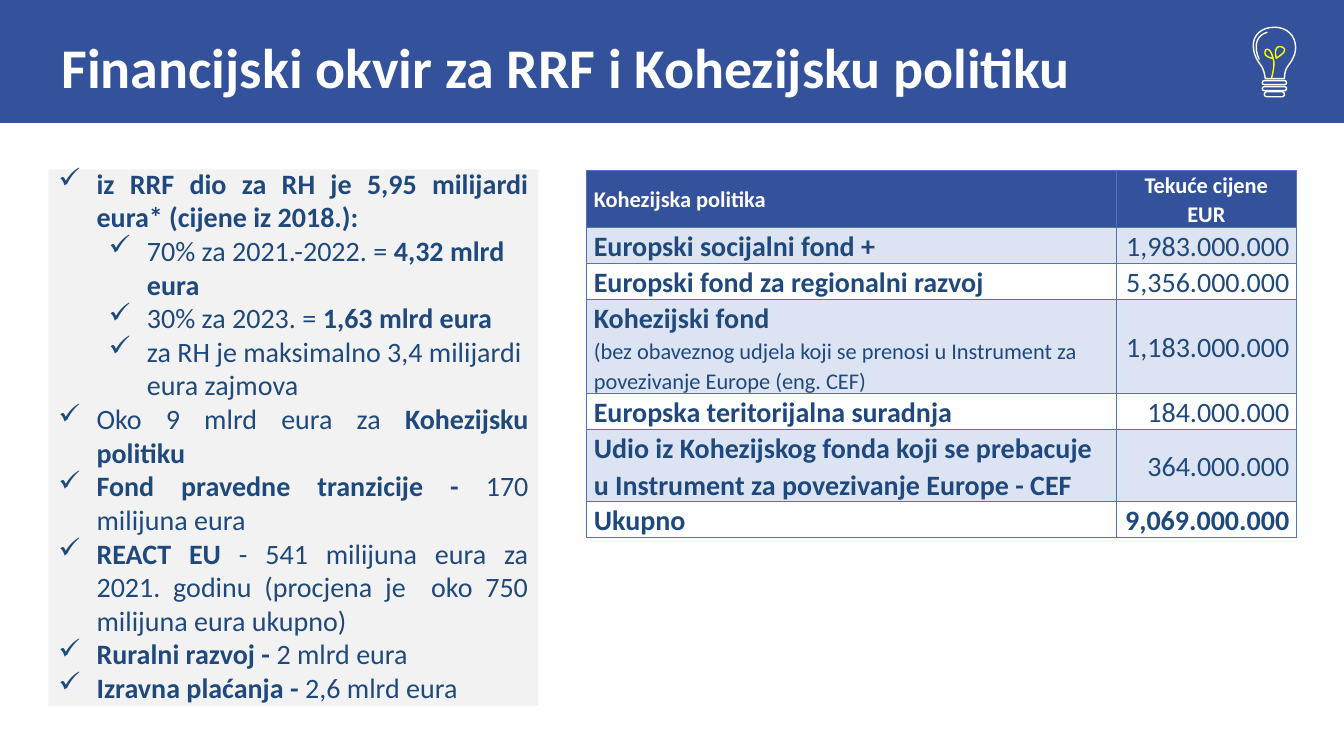
from lxml.etree import SubElement
from pptx import Presentation
from pptx.dml.color import RGBColor
from pptx.enum.shapes import MSO_SHAPE
from pptx.enum.text import MSO_ANCHOR, PP_ALIGN
from pptx.oxml.ns import qn
from pptx.util import Emu, Pt

WIDTH, HEIGHT = 1333, 750
FONT = "Calibri"
NAVY, TEXT_BLUE, BORDER, BAND = "34529B", "1F497D", "5072C4", "DCE3F3"
WHITE, GREY, YELLOW = "FFFFFF", "F2F2F2", "FFFF00"

# Each item: level, then (text, bold) runs
FUNDING_ITEMS = [
    (0, [("iz RRF dio za RH je 5,95 milijardi eura* (cijene iz 2018.):", True)]),
    (1, [("70% za 2021.-2022. = ", False), ("4,32 mlrd eura", True)]),
    (1, [("30% za 2023. = ", False), ("1,63 mlrd eura", True)]),
    (1, [("za RH je maksimalno 3,4 milijardi eura zajmova", False)]),
    (0, [("Oko 9 mlrd eura za ", False), ("Kohezijsku politiku", True)]),
    (0, [("Fond pravedne tranzicije - ", True), ("170 milijuna eura", False)]),
    (0, [("REACT EU", True),
         (" - 541 milijuna eura za 2021. godinu (procjena je  oko 750 milijuna eura ukupno)", False)]),
    (0, [("Ruralni razvoj - ", True), ("2 mlrd eura", False)]),
    (0, [("Izravna plaćanja - ", True), ("2,6 mlrd eura", False)]),
]

# Each row: height, fund, note, amount
FUND_ROWS = [
    (35, "Europski socijalni fond +", "", "1,983.000.000"),
    (35, "Europski fond za regionalni razvoj", "", "5,356.000.000"),
    (93, "Kohezijski fond",
     "(bez obaveznog udjela koji se prenosi u Instrument za povezivanje Europe (eng. CEF)",
     "1,183.000.000"),
    (35, "Europska teritorijalna suradnja", "", "184.000.000"),
    (71, "Udio iz Kohezijskog fonda koji se prebacuje u Instrument za povezivanje Europe - CEF",
     "", "364.000.000"),
    (35, "Ukupno", "", "9,069.000.000"),
]

# Curves: start point, then cubic segments of two controls and an end
BULB_GLASS = [(13, 52), (12, 46, 11, 42, 8, 38), (4, 33, 1, 26, 1, 19), (1, 9, 9, 1, 22, 1),
              (35, 1, 43, 10, 43, 21), (43, 27, 41, 31, 38, 36), (34, 41, 32, 44, 32, 52),
              (26, 52, 19, 52, 13, 52)]
BULB_GLINT = [(15, 6), (8, 8, 4, 13, 4, 20), (4, 25, 5, 29, 7, 33)]
BULB_RINGS = [(10, 54, 24, 4), (10, 60, 24, 4), (12, 65, 20, 5)]
SPROUT = [
    [(20, 32), (12, 32, 10, 30, 11, 25), (14, 23, 17, 26, 20, 32)],
    [(23, 31), (18, 21, 22, 18, 27, 19), (32, 21, 28, 26, 23, 31)],
    [(20, 32), (23, 36, 23, 44, 23, 51)],
]


def px(value):
    return Emu(round(value * 9144))


def color(value):
    return RGBColor.from_string(value)


def style_font(font, size, value, bold=None):
    font.name, font.size, font.bold = FONT, Pt(size), bold
    font.color.rgb = color(value)


def add_panel(slide, box, fill):
    shape = slide.shapes.add_shape(MSO_SHAPE.RECTANGLE, *map(px, box))
    shape.shadow.inherit = False
    shape.fill.solid()
    shape.fill.fore_color.rgb = color(fill)
    shape.line.fill.background()


def add_text_box(slide, box):
    frame = slide.shapes.add_textbox(*map(px, box)).text_frame
    frame.word_wrap = True
    return frame


def outline(shape, value):
    shape.shadow.inherit = False
    shape.fill.background()
    shape.line.color.rgb = color(value)
    shape.line.width = Pt(1)


def curve_points(left, top, curve, steps=8):
    """Sample the cubic segments of a curve as EMU points."""
    start = curve[0]
    points = [start]
    for x1, y1, x2, y2, x3, y3 in curve[1:]:
        for step in range(1, steps + 1):
            t = step / steps
            weights = ((1 - t) ** 3, 3 * t * (1 - t) ** 2, 3 * t * t * (1 - t), t ** 3)
            points.append((sum(w * x for w, x in zip(weights, (start[0], x1, x2, x3))),
                           sum(w * y for w, y in zip(weights, (start[1], y1, y2, y3)))))
        start = (x3, y3)
    return [(px(left + x), px(top + y)) for x, y in points]


def add_curves(slide, left, top, curves, value):
    contours = [curve_points(left, top, curve) for curve in curves]
    builder = slide.shapes.build_freeform(*contours[0][0])
    for contour in contours:
        builder.move_to(*contour[0])
        builder.add_line_segments(contour[1:], close=False)
    shape = builder.convert_to_shape()
    outline(shape, value)
    return shape


def add_bulb(slide, left, top):
    add_curves(slide, left, top, [BULB_GLASS, BULB_GLINT], WHITE)
    for x, y, width, height in BULB_RINGS:
        ring = slide.shapes.add_shape(MSO_SHAPE.ROUNDED_RECTANGLE,
                                      *map(px, (left + x, top + y, width, height)))
        ring.adjustments[0] = 0.5
        outline(ring, WHITE)
    add_curves(slide, left, top, SPROUT, YELLOW).rotation = 13.1


def add_header(slide, left, top, width, height):
    add_panel(slide, (left, top, width, height), NAVY)
    frame = add_text_box(slide, (left + 48, top + 27, width - 168, 70))
    frame.margin_left = frame.margin_right = frame.margin_top = frame.margin_bottom = px(13)
    paragraph = frame.paragraphs[0]
    paragraph.text = "Financijski okvir za RRF i Kohezijsku politiku"
    paragraph.line_spacing = 0.9
    style_font(paragraph.font, 40, WHITE, True)
    add_bulb(slide, left + width - 91, top + 26)


def add_funding_list(slide, left, top, width, height):
    add_panel(slide, (left, top, width, height), GREY)
    frame = add_text_box(slide, (left, top - 8, width, height + 17))
    for index, (level, runs) in enumerate(FUNDING_ITEMS):
        paragraph = frame.add_paragraph() if index else frame.paragraphs[0]
        paragraph.level = level
        paragraph.alignment = PP_ALIGN.LEFT if level else PP_ALIGN.JUSTIFY
        properties = paragraph._p.get_or_add_pPr()
        properties.set("marL", str(px(38 + 50 * level)))
        properties.set("indent", str(px(-38)))
        SubElement(properties, qn("a:buChar"), char="✓")
        style_font(paragraph.font, 20, TEXT_BLUE)
        for text, bold in runs:
            run = paragraph.add_run()
            run.text, run.font.bold = text, bold


def fill_cell(cell, lines, alignment, fill=None):
    """Write (text, size, colour, bold) lines into a bordered cell."""
    properties = cell._tc.get_or_add_tcPr()
    for side in ("lnL", "lnR", "lnT", "lnB"):
        border = SubElement(properties, qn(f"a:{side}"), w=str(Pt(1)))
        SubElement(SubElement(border, qn("a:solidFill")), qn("a:srgbClr"), val=BORDER)
    if fill:
        cell.fill.solid()
        cell.fill.fore_color.rgb = color(fill)
    else:
        cell.fill.background()
    cell.vertical_anchor = MSO_ANCHOR.MIDDLE
    cell.margin_left = cell.margin_right = px(7)
    cell.margin_top = cell.margin_bottom = 0
    for index, (text, size, value, bold) in enumerate(lines):
        frame = cell.text_frame
        paragraph = frame.add_paragraph() if index else frame.paragraphs[0]
        paragraph.text = text
        paragraph.alignment = alignment
        paragraph.line_spacing = 1.07
        style_font(paragraph.font, size, value, bold)


def add_fund_table(slide, left, top, width, height):
    table = slide.shapes.add_table(len(FUND_ROWS) + 1, 2,
                                   *map(px, (left, top, width, height))).table
    table.horz_banding = False
    table.columns[0].width, table.columns[1].width = px(width - 179), px(179)
    table.rows[0].height = px(57)
    fill_cell(table.cell(0, 0), [("Kohezijska politika", 16, WHITE, True)], PP_ALIGN.JUSTIFY, NAVY)
    fill_cell(table.cell(0, 1), [("Tekuće cijene EUR", 16, WHITE, True)], PP_ALIGN.CENTER, NAVY)
    for row, (row_height, fund, note, amount) in enumerate(FUND_ROWS, 1):
        table.rows[row].height = px(row_height)
        fill = BAND if row % 2 else None
        lines = [(fund, 20, TEXT_BLUE, True)]
        if note:
            lines.append((note, 16, TEXT_BLUE, False))
        fill_cell(table.cell(row, 0), lines, PP_ALIGN.LEFT, fill)
        is_total = row == len(FUND_ROWS)
        fill_cell(table.cell(row, 1), [(amount, 20, TEXT_BLUE, is_total)], PP_ALIGN.RIGHT, fill)


def main():
    presentation = Presentation()
    presentation.slide_width, presentation.slide_height = px(WIDTH), px(HEIGHT)
    slide = presentation.slides.add_slide(presentation.slide_layouts[6])
    add_header(slide, 0, 0, WIDTH, 122)
    add_funding_list(slide, 48, 168, 486, 532)
    add_fund_table(slide, 582, 169, 704, 361)
    presentation.save("out.pptx")


if __name__ == "__main__":
    main()
